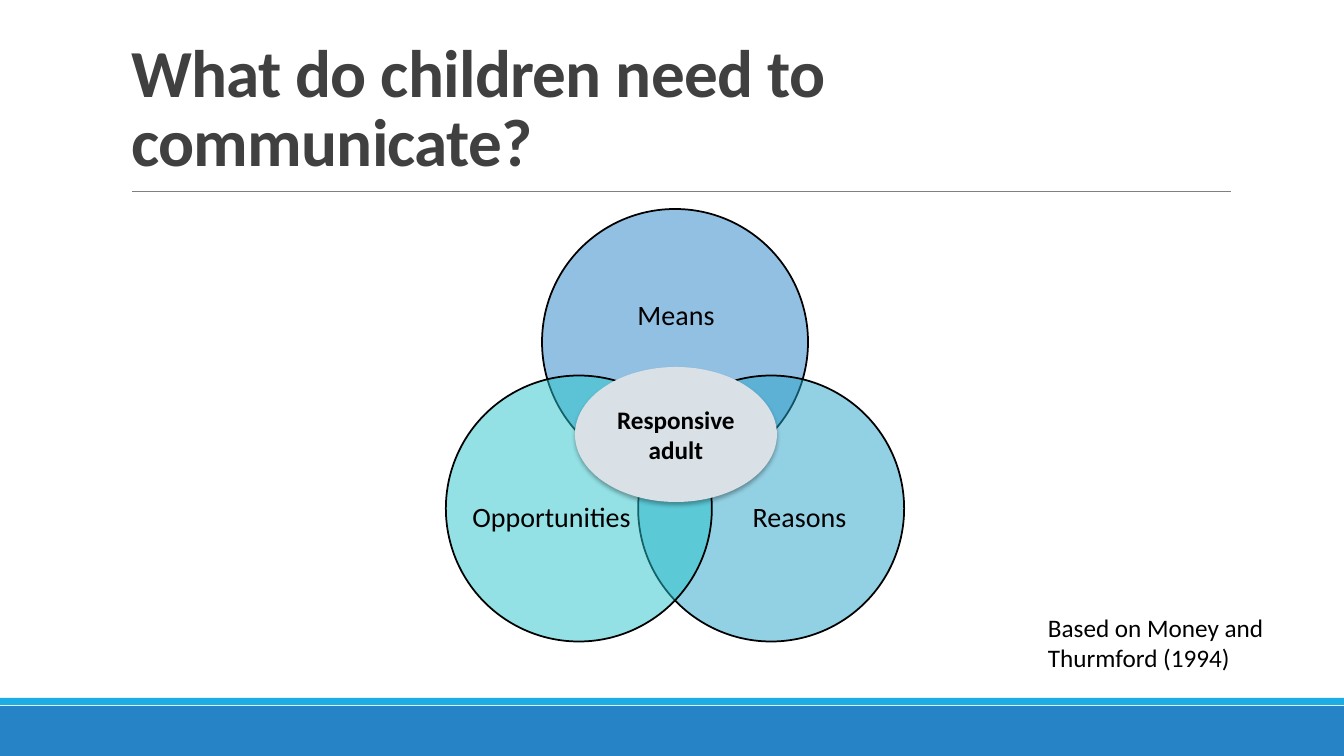
import math

import lxml.etree
import pptx
import pptx.dml.color
import pptx.enum.shapes
import pptx.enum.text
import pptx.oxml.ns
import pptx.util

RGBColor = pptx.dml.color.RGBColor
SHAPE = pptx.enum.shapes.MSO_SHAPE
ALIGN = pptx.enum.text.PP_ALIGN
ANCHOR = pptx.enum.text.MSO_ANCHOR
AUTO_SIZE = pptx.enum.text.MSO_AUTO_SIZE
qn = pptx.oxml.ns.qn

BLUE = RGBColor(0x26, 0x83, 0xC6)
SKY = RGBColor(0x1C, 0xAD, 0xE4)
TEAL_BLUE = RGBColor(0x27, 0xA3, 0xC9)
TURQUOISE = RGBColor(0x28, 0xC4, 0xCC)
PALE_GREY = RGBColor(0xD9, 0xE0, 0xE6)
RULE_GREY = RGBColor(0x80, 0x80, 0x80)
TITLE_GREY = RGBColor(0x40, 0x40, 0x40)
BLACK = RGBColor(0, 0, 0)

FONT = "Calibri"
PX_PER_INCH = 100.8
SLIDE_SIZE = (1344, 756)

TITLE = "What do children need to communicate?"
TITLE_BOX = (121, 25, 1109, 160)
BARS = [((0, 706, 1344, 50), BLUE), ((0, 698, 1344, 7), SKY)]
TITLE_RULE = (132, 191, 1231, 191)

# label, angle from the Venn centre in degrees, colour, label box
CIRCLES = [
    ("Means", -90, BLUE, (578, 256, 196, 120)),
    ("Reasons", 30, TEAL_BLUE, (720, 445, 159, 146)),
    ("Opportunities", 150, TURQUOISE, (472, 445, 159, 146)),
]
VENN_CENTRE = (675, 453)
VENN_RADIUS = 111
CIRCLE_DIAMETER = 266

CORE = "Responsive adult"
CORE_BOX = (575, 367, 202, 135)
CREDIT = "Based on Money and Thurmford (1994)"
CREDIT_BOX = (1038, 607, 263, 72)


def px(*lengths):
    return [pptx.util.Emu(round(length * 914400 / PX_PER_INCH)) for length in lengths]


def write_text(shape, text, size, color=BLACK, bold=False, align=ALIGN.LEFT,
               anchor=ANCHOR.TOP, line_spacing=None, inset=None):
    frame = shape.text_frame
    frame.word_wrap = True
    frame.auto_size = AUTO_SIZE.NONE
    frame.vertical_anchor = anchor
    if inset is not None:
        frame.margin_left = frame.margin_right = inset
        frame.margin_top = frame.margin_bottom = inset
    paragraph = frame.paragraphs[0]
    paragraph.alignment = align
    paragraph.line_spacing = line_spacing
    run = paragraph.add_run()
    run.text = text
    run.font.name = FONT
    run.font.size = pptx.util.Pt(size)
    run.font.bold = bold
    run.font.color.rgb = color
    return run


def add_filled_shape(slide, kind, box, color, outline=None):
    shape = slide.shapes.add_shape(kind, *px(*box))
    shape.shadow.inherit = False
    shape.fill.solid()
    shape.fill.fore_color.rgb = color
    if outline is None:
        shape.line.fill.background()
    else:
        shape.line.color.rgb = outline
        shape.line.width = pptx.util.Pt(1.25)
    return shape


def set_opacity(shape, percent):
    color = shape.element.spPr.find(qn("a:solidFill")).find(qn("a:srgbClr"))
    lxml.etree.SubElement(color, qn("a:alpha"), val=str(percent * 1000))


def add_drop_shadow(shape):
    effects = shape.element.spPr.find(qn("a:effectLst"))
    shadow = lxml.etree.SubElement(
        effects, qn("a:outerShdw"), blurRad=str(pptx.util.Pt(3.5)),
        dist=str(pptx.util.Pt(2.2)), dir="5400000", algn="ctr", rotWithShape="0")
    color = lxml.etree.SubElement(shadow, qn("a:srgbClr"), val=str(BLACK))
    lxml.etree.SubElement(color, qn("a:alpha"), val="32000")


def add_frame(slide):
    """Add the bottom bars, the title and the rule below it."""
    for box, color in BARS:
        add_filled_shape(slide, SHAPE.RECTANGLE, box, color)
    rule = slide.shapes.add_connector(
        pptx.enum.shapes.MSO_CONNECTOR.STRAIGHT, *px(*TITLE_RULE))
    rule.line.color.rgb = RULE_GREY
    rule.line.width = pptx.util.Pt(0.5)
    lxml.etree.SubElement(rule.element.spPr, qn("a:effectLst"))

    title = slide.shapes.title
    title.left, title.top, title.width, title.height = px(*TITLE_BOX)
    run = write_text(title, TITLE, 48, color=TITLE_GREY, bold=True,
                     anchor=ANCHOR.BOTTOM, line_spacing=0.85)
    run.font._element.set("spc", "-50")


def add_venn(slide):
    for label, degrees, color, label_box in CIRCLES:
        angle = math.radians(degrees)
        left = VENN_CENTRE[0] + VENN_RADIUS * math.cos(angle) - CIRCLE_DIAMETER / 2
        top = VENN_CENTRE[1] + VENN_RADIUS * math.sin(angle) - CIRCLE_DIAMETER / 2
        circle = add_filled_shape(
            slide, SHAPE.OVAL, (left, top, CIRCLE_DIAMETER, CIRCLE_DIAMETER), color, BLACK)
        set_opacity(circle, 50)
        write_text(slide.shapes.add_textbox(*px(*label_box)), label, 20,
                   align=ALIGN.CENTER, anchor=ANCHOR.MIDDLE, line_spacing=0.9, inset=0)

    core = add_filled_shape(slide, SHAPE.FLOWCHART_CONNECTOR, CORE_BOX, PALE_GREY)
    add_drop_shadow(core)
    write_text(core, CORE, 18, bold=True, align=ALIGN.CENTER, anchor=ANCHOR.MIDDLE)


def main():
    presentation = pptx.Presentation()
    presentation.slide_width, presentation.slide_height = px(*SLIDE_SIZE)
    slide = presentation.slides.add_slide(presentation.slide_layouts[5])
    add_frame(slide)
    add_venn(slide)
    credit = slide.shapes.add_textbox(*px(*CREDIT_BOX))
    write_text(credit, CREDIT, 18)
    credit.text_frame.auto_size = AUTO_SIZE.SHAPE_TO_FIT_TEXT
    presentation.save("out.pptx")


if __name__ == "__main__":
    main()
